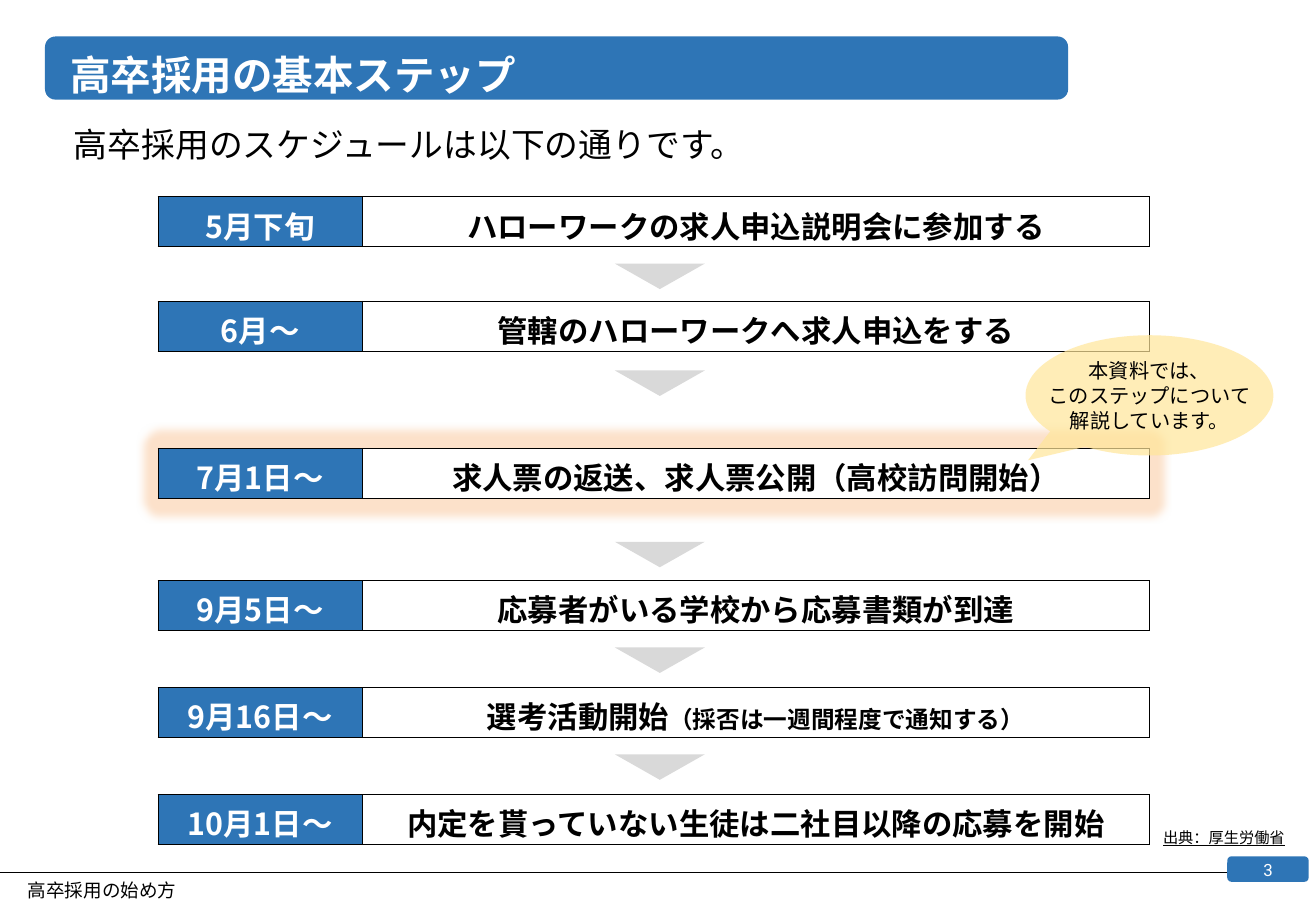
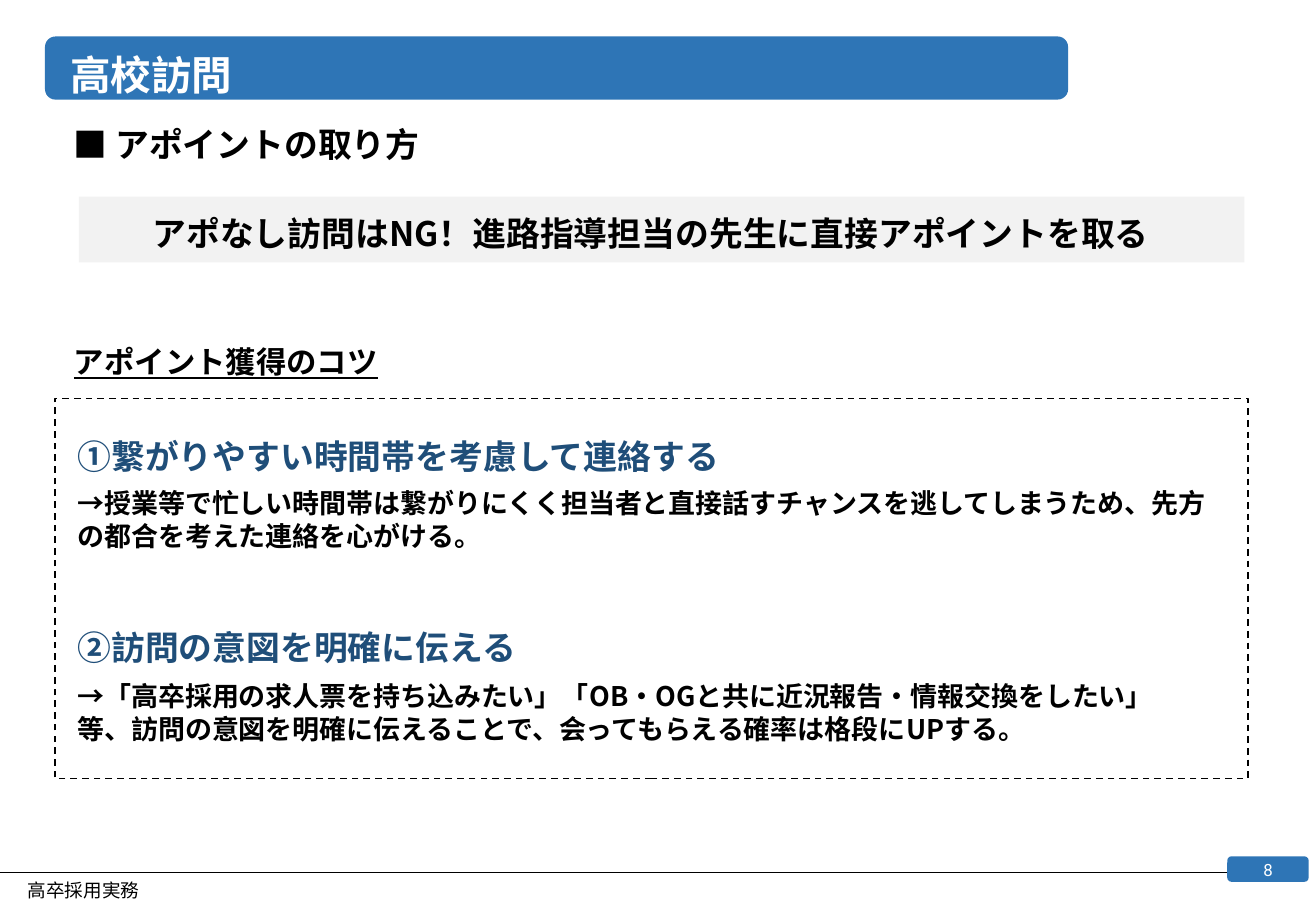
import pptx
import pptx.dml.color
import pptx.enum.dml
import pptx.enum.shapes
import pptx.enum.text
import pptx.oxml
import pptx.oxml.ns
import pptx.util
from lxml import etree

Inches = pptx.util.Inches
Pt = pptx.util.Pt
SHAPE = pptx.enum.shapes.MSO_SHAPE
ALIGN = pptx.enum.text.PP_ALIGN
ANCHOR = pptx.enum.text.MSO_ANCHOR

BLUE, NAVY, BLACK, WHITE = "2E75B6", "1F4E79", "000000", "FFFFFF"
GRAY, PALE_GRAY, PEACH, YELLOW = "D9D9D9", "F2F2F2", "FCE1CA", "FFE699"
FONT, NUMBER_FONT = "Noto Sans CJK JP", "Roboto"
NORMAL_LINE, TIGHT_LINE = 1.22, 1.1

STEP_WIDTHS = (1.68, 6.48)
STEP_HEIGHT = 0.41
# top, gap from top to the arrow below, date, runs of (text, size)
STEPS = [
    (1.62, 0.55, "5月下旬", [("ハローワークの求人申込説明会に参加する", 18)]),
    (2.48, 0.57, "6月～", [("管轄のハローワークへ求人申込をする", 18)]),
    (3.69, 0.77, "7月1日～", [("求人票の返送、求人票公開（高校訪問開始）", 18)]),
    (4.78, 0.55, "9月5日～", [("応募者がいる学校から応募書類が到達", 18)]),
    (5.66, 0.55, "9月16日～", [("選考活動開始", 18), ("（採否は一週間程度で通知する）", 14)]),
    (6.54, None, "10月1日～", [("内定を貰っていない生徒は二社目以降の応募を開始", 18)]),
]
HIGHLIGHTED_STEP = 2

# text, size, colour, space before
TIPS = [
    ("①繋がりやすい時間帯を考慮して連絡する", 20, NAVY, 0),
    ("→授業等で忙しい時間帯は繋がりにくく担当者と直接話すチャンスを逃してしまうため、"
     "先方の都合を考えた連絡を心がける。", 16, BLACK, 6),
    ("②訪問の意図を明確に伝える", 20, NAVY, 44),
    ("→「高卒採用の求人票を持ち込みたい」「OB・OGと共に近況報告・情報交換をしたい」", 16, BLACK, 7),
    ("等、訪問の意図を明確に伝えることで、会ってもらえる確率は格段にUPする。", 16, BLACK, 0),
]


def color(value):
    return pptx.dml.color.RGBColor.from_string(value)


def add_child(parent, tag, **attributes):
    child = etree.SubElement(parent, pptx.oxml.ns.qn(tag))
    for name, value in attributes.items():
        child.set(name, str(value))
    return child


def add_run(paragraph, text, size, tint=BLACK, font=FONT, **formats):
    run = paragraph.add_run()
    run.text = text
    values = {"size": Pt(size), "name": font, **formats}
    for name, value in values.items():
        setattr(run.font, name, value)
    run.font.color.rgb = color(tint)
    add_child(run.font._element, "a:ea", typeface=font)


def add_text(slide, box, lines, align=ALIGN.LEFT, anchor=ANCHOR.TOP,
             line_factor=NORMAL_LINE, **formats):
    """Each line is (text, size, colour, space before)."""
    frame = slide.shapes.add_textbox(*map(Inches, box)).text_frame
    frame.word_wrap = True
    frame.vertical_anchor = anchor
    for index, (text, size, tint, before) in enumerate(lines):
        paragraph = frame.add_paragraph() if index else frame.paragraphs[0]
        paragraph.alignment = align
        paragraph.line_spacing = Pt(round(size * line_factor, 1))
        paragraph.space_before = Pt(before)
        add_run(paragraph, text, size, tint, **formats)


def add_shape(slide, kind, box, fill=None):
    shape = slide.shapes.add_shape(kind, *map(Inches, box))
    shape.shadow.inherit = False
    shape.line.fill.background()
    if fill:
        shape.fill.solid()
        shape.fill.fore_color.rgb = color(fill)
    else:
        shape.fill.background()
    return shape


def add_frame(presentation, title, number, footer):
    """Add a slide with its title band, footer line and page number."""
    slide = presentation.slides.add_slide(presentation.slide_layouts[6])
    add_shape(slide, SHAPE.ROUNDED_RECTANGLE, (0.37, 0.3, 8.42, 0.52), BLUE)
    rule = slide.shapes.add_connector(
        pptx.enum.shapes.MSO_CONNECTOR.STRAIGHT,
        *map(Inches, (0, 7.18, 10.1, 7.18)))
    rule.line.color.rgb = color(BLACK)
    rule.line.width = Pt(0.25)
    add_child(rule._element.spPr, "a:effectLst")
    add_shape(slide, SHAPE.ROUNDED_RECTANGLE, (10.1, 7.05, 0.67, 0.21), BLUE)
    add_text(slide, (0.48, 0.4, 7.96, 0.42), [(title, 24, WHITE, 0)],
             anchor=ANCHOR.MIDDLE, bold=True)
    add_text(slide, (10.1, 6.96, 0.67, 0.4), [(str(number), 10, WHITE, 0)],
             align=ALIGN.CENTER, anchor=ANCHOR.MIDDLE, font=NUMBER_FONT)
    add_text(slide, (0.13, 7.2, 3.62, 0.31), [(footer, 11, BLACK, 0)],
             line_factor=TIGHT_LINE)
    return slide


def add_lead(slide, text, **formats):
    add_text(slide, (0.51, 1, 7.47, 0.37), [(text, 20, BLACK, 0)],
             line_factor=TIGHT_LINE, **formats)


def border_cell(cell):
    properties = cell._tc.get_or_add_tcPr()
    for index, side in enumerate(("a:lnL", "a:lnR", "a:lnT", "a:lnB")):
        line = etree.Element(pptx.oxml.ns.qn(side), w=str(Pt(0.5)))
        add_child(add_child(line, "a:solidFill"), "a:srgbClr", val=BLACK)
        properties.insert(index, line)


def add_step(slide, left, top, date, runs, fill):
    table = slide.shapes.add_table(
        1, 2, *map(Inches, (left, top, sum(STEP_WIDTHS), STEP_HEIGHT))).table
    table.first_row = table.horz_banding = False
    contents = (([(date, 18)], WHITE, BLUE), (runs, BLACK, fill))
    for index, (cell_runs, tint, cell_fill) in enumerate(contents):
        table.columns[index].width = Inches(STEP_WIDTHS[index])
        cell = table.cell(0, index)
        cell.vertical_anchor = ANCHOR.MIDDLE
        if cell_fill:
            cell.fill.solid()
            cell.fill.fore_color.rgb = color(cell_fill)
        else:
            cell.fill.background()
        border_cell(cell)
        paragraph = cell.text_frame.paragraphs[0]
        paragraph.alignment = ALIGN.CENTER
        for text, size in cell_runs:
            add_run(paragraph, text, size, tint, bold=True)


def add_schedule(slide, left):
    """Stack the steps, with a glow behind one and arrows between them."""
    glow_top = STEPS[HIGHLIGHTED_STEP][0] - 0.21
    glow = add_shape(slide, SHAPE.ROUNDED_RECTANGLE,
                     (left - 0.18, glow_top, 8.52, 0.83), PEACH)
    effects = glow._element.spPr.find(pptx.oxml.ns.qn("a:effectLst"))
    add_child(effects, "a:softEdge", rad=Pt(5))
    for index, (top, arrow_gap, date, runs) in enumerate(STEPS):
        fill = WHITE if index == HIGHLIGHTED_STEP else None
        add_step(slide, left, top, date, runs, fill)
        if arrow_gap:
            arrow = add_shape(slide, SHAPE.ISOSCELES_TRIANGLE,
                              (left + 3.76, top + arrow_gap, 0.74, 0.21), GRAY)
            arrow.rotation = 180


def add_callout(slide, left, top, lines):
    width = 2.04
    bubble = add_shape(slide, SHAPE.OVAL_CALLOUT, (left, top, width, 0.99), YELLOW)
    bubble.adjustments[0], bubble.adjustments[1] = -0.49, 0.54
    tint = bubble._element.spPr.find(".//" + pptx.oxml.ns.qn("a:srgbClr"))
    add_child(tint, "a:alpha", val=70000)
    add_text(slide, (left, top + 0.14, width, 0.71),
             [(line, 12, BLACK, 0) for line in lines], align=ALIGN.CENTER)


def add_message(slide, left, top, text):
    add_shape(slide, SHAPE.RECTANGLE, (left, top, 9.59, 0.54), PALE_GRAY)
    add_text(slide, (left + 0.05, top + 0.08, 9.31, 0.44), [(text, 20, BLACK, 0)],
             align=ALIGN.CENTER, bold=True)


def add_tips(slide, left, top, heading):
    """Place a heading above a dashed box of tips."""
    add_text(slide, (left + 0.06, top - 0.51, 9.73, 0.4), [(heading, 18, BLACK, 0)],
             bold=True, underline=True)
    add_text(slide, (left + 0.09, top + 0.25, 9.7, 2.64), TIPS, bold=True)
    border = add_shape(slide, SHAPE.RECTANGLE, (left, top, 9.82, 3.13))
    border.line.color.rgb = color(BLACK)
    border.line.width = Pt(1)
    border.line.dash_style = pptx.enum.dml.MSO_LINE.DASH


def build_schedule_slide(presentation):
    slide = add_frame(presentation, "高卒採用の基本ステップ", 3, "高卒採用の始め方")
    add_lead(slide, "高卒採用のスケジュールは以下の通りです。")
    add_schedule(slide, 1.3)
    add_text(slide, (8.31, 6.78, 2.36, 0.23), [("出典：厚生労働省", 9, BLACK, 0)],
             align=ALIGN.RIGHT, line_factor=TIGHT_LINE, underline=True)
    add_callout(slide, 8.44, 2.76,
                ["本資料では、", "このステップについて", "解説しています。"])


def build_visit_slide(presentation):
    slide = add_frame(presentation, "高校訪問", 8, "高卒採用実務")
    add_lead(slide, "■ アポイントの取り方", bold=True)
    add_message(slide, 0.65, 1.62,
                "アポなし訪問はNG！進路指導担当の先生に直接アポイントを取る")
    add_tips(slide, 0.45, 3.28, "アポイント獲得のコツ")


def main():
    presentation = pptx.Presentation()
    presentation.slide_width = Inches(10.83)
    presentation.slide_height = Inches(7.5)
    build_schedule_slide(presentation)
    build_visit_slide(presentation)
    presentation.save("out.pptx")


if __name__ == "__main__":
    main()
